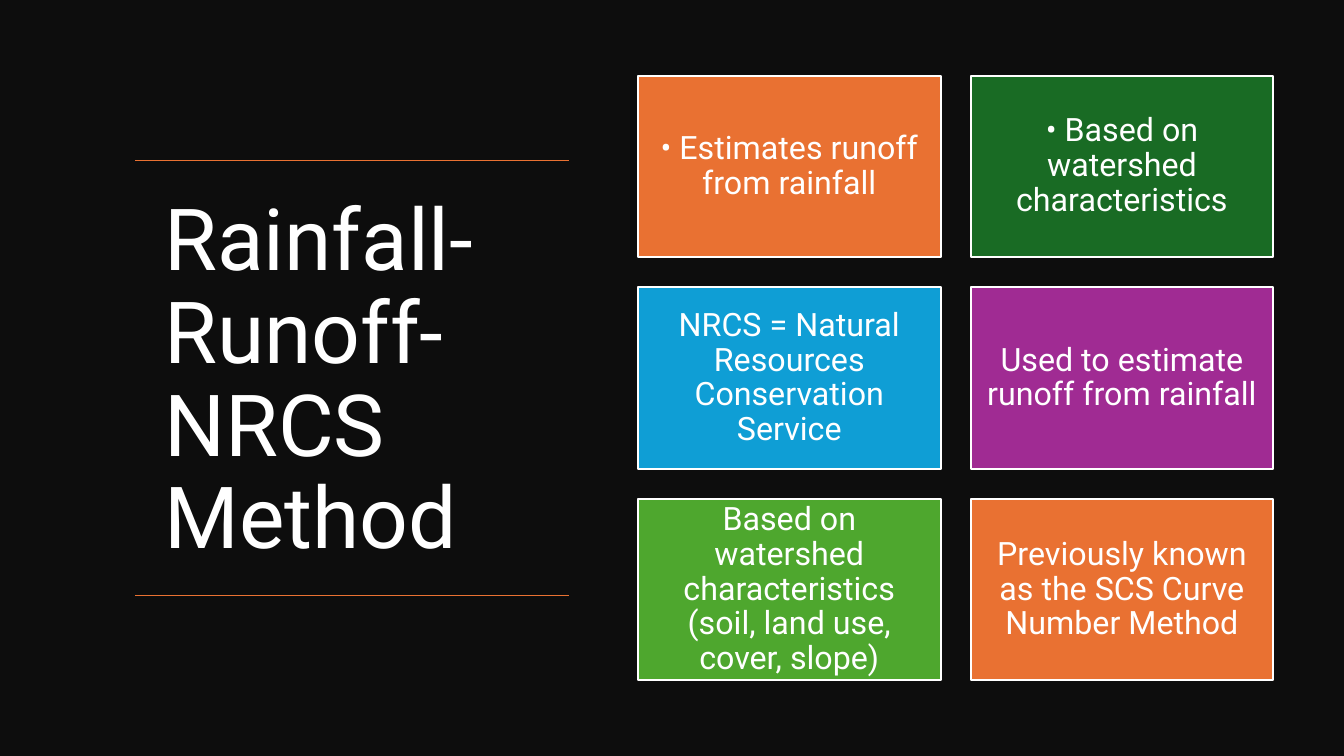
"""Build the slide on the NRCS rainfall-runoff method."""
from dataclasses import dataclass

from lxml.etree import SubElement
from pptx import Presentation
from pptx.dml.color import RGBColor
from pptx.enum.shapes import MSO_CONNECTOR, MSO_SHAPE
from pptx.enum.text import MSO_ANCHOR, MSO_AUTO_SIZE, PP_ALIGN
from pptx.oxml.ns import qn
from pptx.slide import Slide
from pptx.text.text import TextFrame
from pptx.util import Inches, Pt


@dataclass(frozen=True)
class Theme:
    font: str = "Roboto"
    background: str = "0D0D0D"
    text: str = "FFFFFF"
    orange: str = "E97132"
    dark_green: str = "196B24"
    blue: str = "0F9ED5"
    purple: str = "A02B93"
    green: str = "4EA72E"
    title_size: float = 61.2
    card_size: float = 23
    rule_width: float = 1
    card_border: float = 1.5


@dataclass(frozen=True)
class Card:
    text: str
    fill: str


THEME = Theme()
CARDS = [
    Card("• Estimates runoff from rainfall", THEME.orange),
    Card("• Based on watershed characteristics", THEME.dark_green),
    Card("NRCS = Natural Resources Conservation Service", THEME.blue),
    Card("Used to estimate runoff from rainfall", THEME.purple),
    Card("Based on watershed characteristics (soil, land use, cover, slope)", THEME.green),
    Card("Previously known as the SCS Curve Number Method", THEME.orange),
]
COLUMNS = 2
GRID_LEFT, GRID_TOP = 6.33, 0.75
CARD_WIDTH, CARD_HEIGHT, GAP = 3, 1.8, 0.3
RULE_LEFT, RULE_RIGHT = 1.34, 5.64
RULE_TOPS = (1.59, 5.91)


def rgb(color: str) -> RGBColor:
    """Turn a hex string into a colour."""
    return RGBColor.from_string(color)


def write_text(frame: TextFrame, text: str, *, size: float, align: PP_ALIGN,
               inset: float = 0.1, vertical_inset: float = 0.1) -> None:
    """Fill a text frame with one formatted, vertically centred paragraph."""
    frame.word_wrap = True
    frame.auto_size = MSO_AUTO_SIZE.NONE
    frame.vertical_anchor = MSO_ANCHOR.MIDDLE
    frame.margin_left = frame.margin_right = Inches(inset)
    frame.margin_top = frame.margin_bottom = Inches(vertical_inset)
    paragraph = frame.paragraphs[0]
    paragraph.alignment = align
    paragraph.line_spacing = 0.9
    run = paragraph.add_run()
    run.text = text
    run.font.name = THEME.font
    run.font.size = Pt(size)
    run.font.color.rgb = rgb(THEME.text)


def add_title(slide: Slide, text: str) -> None:
    """Place and format the slide title."""
    title = slide.shapes.title
    title.left, title.top = Inches(1.53), Inches(1.83)
    title.width, title.height = Inches(4.58), Inches(3.92)
    write_text(title.text_frame, text, size=THEME.title_size,
               align=PP_ALIGN.LEFT, vertical_inset=0.05)


def add_rule(slide: Slide, top: float) -> None:
    """Draw a horizontal rule beside the title."""
    rule = slide.shapes.add_connector(
        MSO_CONNECTOR.STRAIGHT, Inches(RULE_RIGHT), Inches(top),
        Inches(RULE_LEFT), Inches(top))
    rule.line.color.rgb = rgb(THEME.orange)
    rule.line.width = Pt(THEME.rule_width)
    SubElement(rule._element.spPr, qn("a:effectLst"))


def add_card(slide: Slide, card: Card, row: int, column: int) -> None:
    """Draw one coloured card at its place in the grid."""
    tile = slide.shapes.add_shape(
        MSO_SHAPE.RECTANGLE,
        Inches(GRID_LEFT + column * (CARD_WIDTH + GAP)),
        Inches(GRID_TOP + row * (CARD_HEIGHT + GAP)),
        Inches(CARD_WIDTH), Inches(CARD_HEIGHT))
    tile.shadow.inherit = False
    tile.fill.solid()
    tile.fill.fore_color.rgb = rgb(card.fill)
    tile.line.color.rgb = rgb(THEME.text)
    tile.line.width = Pt(THEME.card_border)
    write_text(tile.text_frame, card.text, size=THEME.card_size, align=PP_ALIGN.CENTER)


def main() -> None:
    """Build and save the presentation."""
    presentation = Presentation()
    presentation.slide_width, presentation.slide_height = Inches(13.33), Inches(7.5)
    slide = presentation.slides.add_slide(presentation.slide_layouts[5])
    backdrop = slide.background.fill
    backdrop.solid()
    backdrop.fore_color.rgb = rgb(THEME.background)
    add_title(slide, "Rainfall-Runoff-NRCS Method")
    for top in RULE_TOPS:
        add_rule(slide, top)
    for index, card in enumerate(CARDS):
        add_card(slide, card, *divmod(index, COLUMNS))
    presentation.save("out.pptx")


if __name__ == "__main__":
    main()
